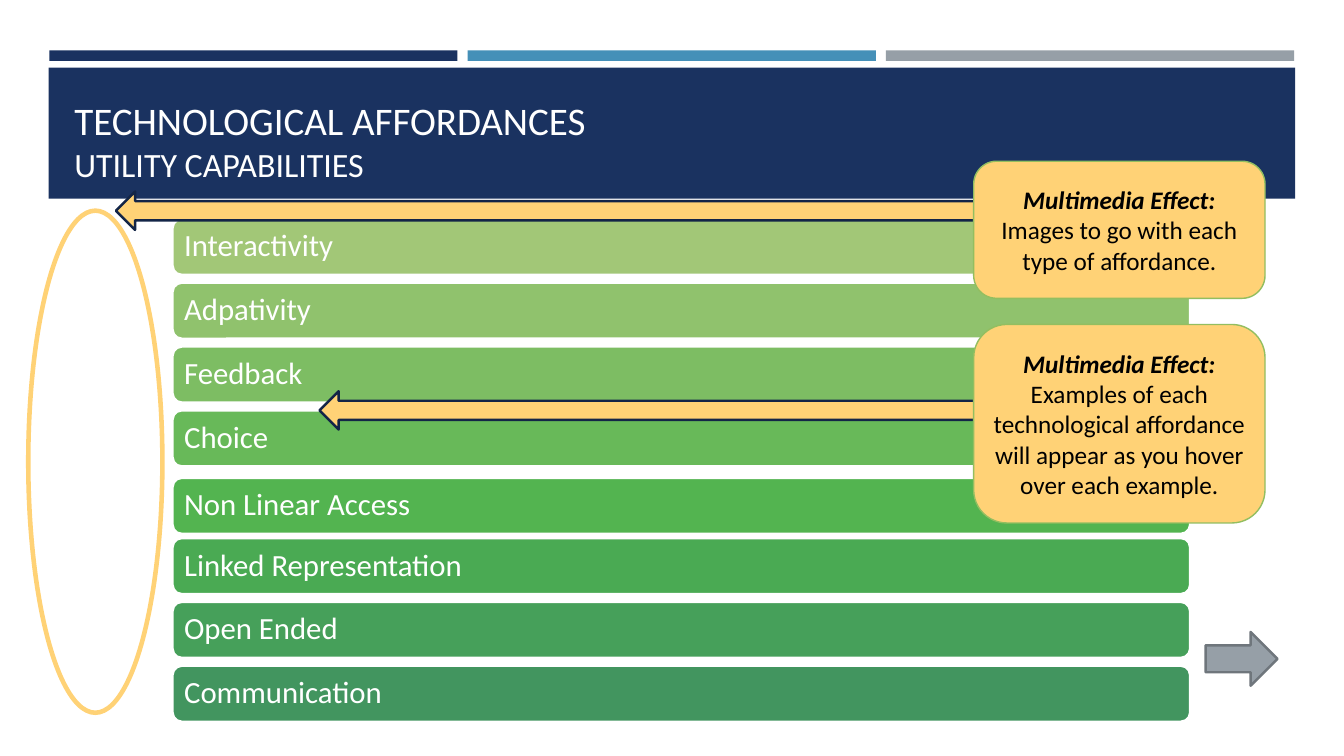
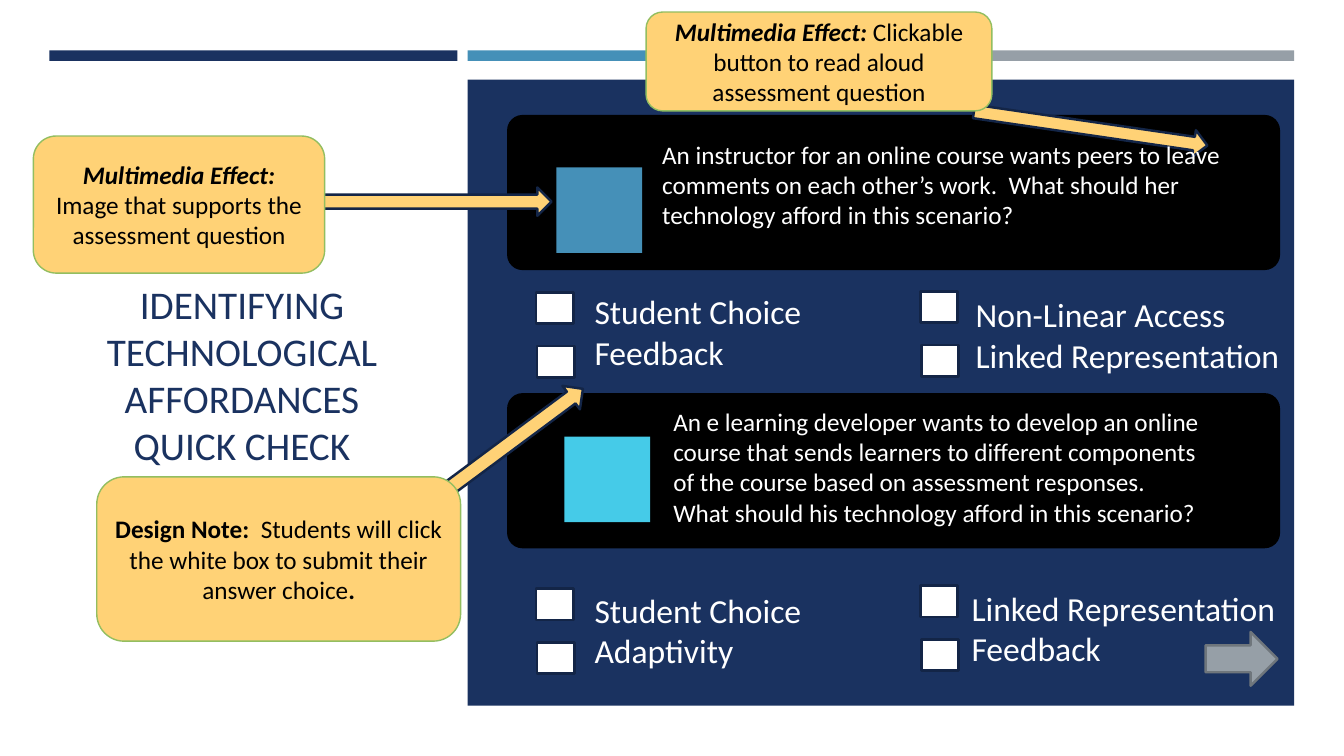
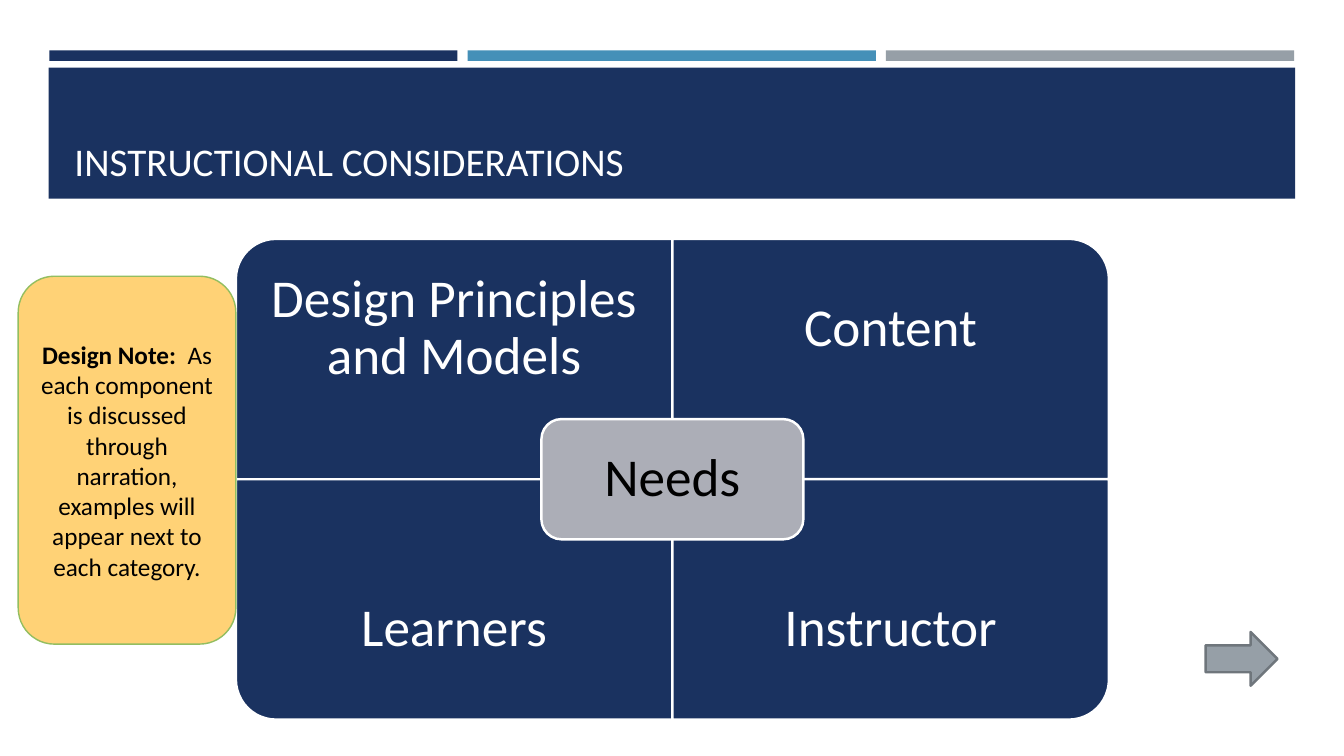
from pptx import Presentation
from pptx.dml.color import RGBColor
from pptx.enum.shapes import MSO_SHAPE as SHAPE
from pptx.enum.text import MSO_ANCHOR as ANCHOR, PP_ALIGN as ALIGN
from pptx.util import Pt

FONT = "Calibri"
COLORS = {
    "navy": "1A3260", "blue": "4590B8", "grey": "969FA7", "grey_edge": "6F767C",
    "white": "FFFFFF", "black": "000000", "cyan": "45CBE8", "silver": "ACAEB7",
    "amber": "FFD276", "leaf": "93BE60", "ink": "132547",
}
AFFORDANCES = [
    ("Interactivity", "A2C777"), ("Adpativity", "90C26D"),
    ("Feedback", "7DBD63"), ("Choice", "68B959"),
    ("Non Linear Access", "53B450"), ("Linked Representation", "4AAA53"),
    ("Open Ended", "46A05A"), ("Communication", "42955F"),
]
EFFECT = ("Multimedia Effect: ", {"bold": True, "italic": True})
NOTE = ("Design Note:  ", {"bold": True})


def rgb(color):
    """Turn a colour name or a hex string into an RGBColor."""
    return RGBColor.from_string(COLORS.get(color, color))


def add_box(s, kind, box, fill=None, line=None, width=1.75, rot=0):
    """Add a preset shape, given its box in points."""
    sp = s.shapes.add_shape(kind, *map(Pt, box))
    sp.shadow.inherit = False
    sp.rotation = rot
    if fill:
        sp.fill.solid()
        sp.fill.fore_color.rgb = rgb(fill)
    else:
        sp.fill.background()
    if line:
        sp.line.color.rgb = rgb(line)
        sp.line.width = Pt(width)
    else:
        sp.line.fill.background()
    return sp


def write(sp, paragraphs, size, color="white", align=ALIGN.LEFT,
          anchor=ANCHOR.MIDDLE, inset=None, spacing=None):
    """Fill a shape with paragraphs, each a list of (text, font settings) runs."""
    tf = sp.text_frame
    tf.word_wrap = True
    tf.vertical_anchor = anchor
    if inset is not None:
        tf.margin_left = tf.margin_right = Pt(inset)
        tf.margin_top = tf.margin_bottom = Pt(inset)
    for i, runs in enumerate(paragraphs):
        p = tf.add_paragraph() if i else tf.paragraphs[0]
        p.alignment = align
        if spacing:
            p.line_spacing = spacing
        for text, settings in runs:
            r = p.add_run()
            r.text = text
            r.font.name = FONT
            r.font.size = Pt(size)
            r.font.color.rgb = rgb(color)
            for name, value in settings.items():
                setattr(r.font, name, value)


def add_text(s, box, paragraphs, size, **style):
    """Add a text box, given its box in points."""
    write(s.shapes.add_textbox(*map(Pt, box)), paragraphs, size, **style)


def add_bands(s):
    """Draw the three bands at the top of a slide."""
    for i, color in enumerate(("navy", "blue", "grey")):
        add_box(s, SHAPE.RECTANGLE, (35.2 + 298.8 * i, 36, 291.6, 7.5), color)


def add_header(s, lines):
    """Draw the bands and the title bar with its lines of text."""
    add_bands(s)
    add_box(s, SHAPE.RECTANGLE, (34.8, 48.3, 890.4, 93.7), "navy")
    add_text(s, (46.1, 55.4, 868.3, 79.9), lines, 28, anchor=ANCHOR.BOTTOM)


def add_next(s):
    """Draw the arrow that leads to the next slide."""
    add_box(s, SHAPE.RIGHT_ARROW, (861.1, 451.4, 51.4, 38.4), "grey", "grey_edge")


def add_pointer(s, box, kind=SHAPE.RIGHT_ARROW, rot=0):
    """Draw an amber block arrow."""
    add_box(s, kind, box, "amber", "ink", rot=rot)


def add_callout(s, box, *runs):
    """Draw an amber note."""
    sp = add_box(s, SHAPE.ROUNDED_RECTANGLE, box, "amber", "leaf", 1)
    write(sp, [runs], 18, "black", ALIGN.CENTER)


def add_bars(s, box, pitch, height):
    """Stack the affordance bars from the top of a box."""
    x, y, w = box
    for i, (label, color) in enumerate(AFFORDANCES):
        nudge = 2.6 if label == "Non Linear Access" else 0
        bar = (x, y + pitch * i + nudge, w, height)
        sp = add_box(s, SHAPE.ROUNDED_RECTANGLE, bar, color, "white", 2)
        write(sp, [[(label, {})]], 22, inset=6.5, spacing=0.9)


def add_card(s, box, dx, dy, color):
    """Draw a black question card with its picture square."""
    sp = add_box(s, SHAPE.ROUNDED_RECTANGLE, box, "black")
    sp.adjustments[0] = 0.1
    add_box(s, SHAPE.RECTANGLE, (box[0] + dx, box[1] + dy, 61.2, 61.2), color)


def add_question(s, card, offset, size, text):
    """Write a question at an offset inside its card."""
    box = (card[0] + offset[0], card[1] + offset[1], *size)
    add_text(s, box, [[(text, {})]], 18, anchor=ANCHOR.TOP)


def add_choices(s, x, y, dx, dy, width, labels):
    """Draw two tick boxes and, at an offset, their labels."""
    for i in range(2):
        add_box(s, SHAPE.RECTANGLE, (x + 0.7 * i, y + 38.4 * i, 26.6, 22.3),
                "white", "ink")
    add_text(s, (x + dx, y + dy, width, 65.5), [[(label, {})] for label in labels],
             24, anchor=ANCHOR.TOP)


def add_matrix(s, box, rows, centre):
    """Draw a two by two matrix with rounded outer corners and a centre label."""
    x, y, w, h = box[0], box[1], box[2] / 2, box[3] / 2
    turns = ((270, 0), (180, 90))
    style = {"align": ALIGN.CENTER, "spacing": 0.9}
    for j, labels in enumerate(rows):
        for i, label in enumerate(labels):
            left, top, rot = x + w * i, y + h * j, turns[j][i]
            cell = (left, top, w, h)
            if rot % 180:
                cell = (left + (w - h) / 2, top + (h - w) / 2, h, w)
            add_box(s, SHAPE.ROUND_1_RECTANGLE, cell, "navy", "white", rot=rot)
            add_text(s, (left, top + h / 4 * j, w, h * 0.75), [[(label, {})]], 38,
                     inset=21.6, **style)
    hub = (x + w * 0.7, y + h * 0.75, w * 0.6, h / 2)
    sp = add_box(s, SHAPE.ROUNDED_RECTANGLE, hub, "silver", "white")
    write(sp, [[(centre, {})]], 38, "black", inset=11.5, **style)


def build_affordances(s):
    """Build the slide that lists the affordances."""
    add_header(s, [[("TECHNOLOGICAL AFFORDANCES", {"size": Pt(27.9)})],
                   [("UTILITY CAPABILITIES", {"size": Pt(24.3)})]])
    add_next(s)
    add_box(s, SHAPE.OVAL, (20.2, 150.5, 95.8, 358.6), None, "amber", 3.25)
    add_bars(s, (123.1, 156.2, 727.2), 45.6, 40.3)
    add_pointer(s, (82.8, 136.8, 632.9, 27.4), SHAPE.LEFT_ARROW)
    add_callout(s, (695.5, 115.2, 208.1, 97.9), EFFECT,
                ("Images to go with each type of affordance.", {}))
    add_pointer(s, (228.2, 279.4, 632.9, 27.4), SHAPE.LEFT_ARROW)
    add_callout(s, (695.5, 231.8, 208.1, 141.8), EFFECT,
                ("Examples of each technological affordance will appear as you "
                 "hover over each example.", {}))


def build_quick_check(s):
    """Build the slide with the two assessment questions."""
    add_text(s, (46.1, 82.1, 253.4, 370.8),
             [[("IDENTIFYING TECHNOLOGICAL AFFORDANCES QUICK CHECK", {})]], 28,
             color="navy", align=ALIGN.CENTER)
    add_bands(s)
    add_box(s, SHAPE.RECTANGLE, (334.1, 56.9, 590.4, 447.1), "navy")
    first, second = [(362.2, y, 552.2, 110.9) for y in (82.1, 280.8)]
    add_card(s, first, 35.3, 37.4, "blue")
    add_card(s, second, 41, 31, "cyan")
    add_pointer(s, (208.1, 336.2, 231.1, 20.9), rot=323.4)
    add_next(s)
    add_pointer(s, (215.3, 133.9, 178.6, 20.2))
    add_pointer(s, (694.8, 82.1, 168.5, 19.4), rot=8.3)
    add_callout(s, (461.5, 8.6, 247, 70.6), EFFECT,
                ("Clickable button to read aloud assessment question", {}))
    add_callout(s, (69.1, 340.6, 259.9, 117.4), NOTE,
                ("Students will click the white box to submit their answer choice", {}),
                (".", {"bold": True}))
    add_callout(s, (23.8, 97.2, 208.1, 97.9), EFFECT,
                ("Image that supports the assessment question", {}))
    for choices in (
        (383, 208.8, 34.6, -4.3, 177, ("Student Choice", "Feedback")),
        (383, 420.5, 34.6, -2.9, 177, ("Student Choice", "Adaptivity")),
        (657.4, 208.1, 32.4, -1.5, 243.4,
         ("Non-Linear Access", "Linked Representation")),
        (657.4, 418.3, 29.5, -2.1, 255.6, ("Linked Representation", "Feedback")),
    ):
        add_choices(s, *choices)
    add_question(s, first, (103.7, 13.7), (444.2, 72.7),
                 "An instructor for an online course wants peers to leave comments on "
                 "each other’s work.  What should her technology afford in this "
                 "scenario?")
    add_question(s, second, (111.6, 5.8), (390.2, 94.3),
                 "An e learning developer wants to develop an online course that sends "
                 "learners to different components of the course based on assessment "
                 "responses. What should his technology afford in this scenario?")


def build_considerations(s):
    """Build the slide with the matrix of considerations."""
    add_header(s, [[("INSTRUCTIONAL CONSIDERATIONS", {})]])
    add_next(s)
    add_matrix(s, (168.5, 170.6, 623.6, 343.4),
               (("Design Principles and Models", "Content"),
                ("Learners", "Instructor")), "Needs")
    add_callout(s, (13, 197.3, 155.5, 262.8), NOTE,
                ("As each component is discussed through narration, examples will "
                 "appear next to each category.", {}))


def main():
    """Build and save the presentation."""
    prs = Presentation()
    prs.slide_width, prs.slide_height = Pt(960), Pt(540)
    for build in (build_affordances, build_quick_check, build_considerations):
        build(prs.slides.add_slide(prs.slide_layouts[6]))
    prs.save("out.pptx")


if __name__ == "__main__":
    main()
